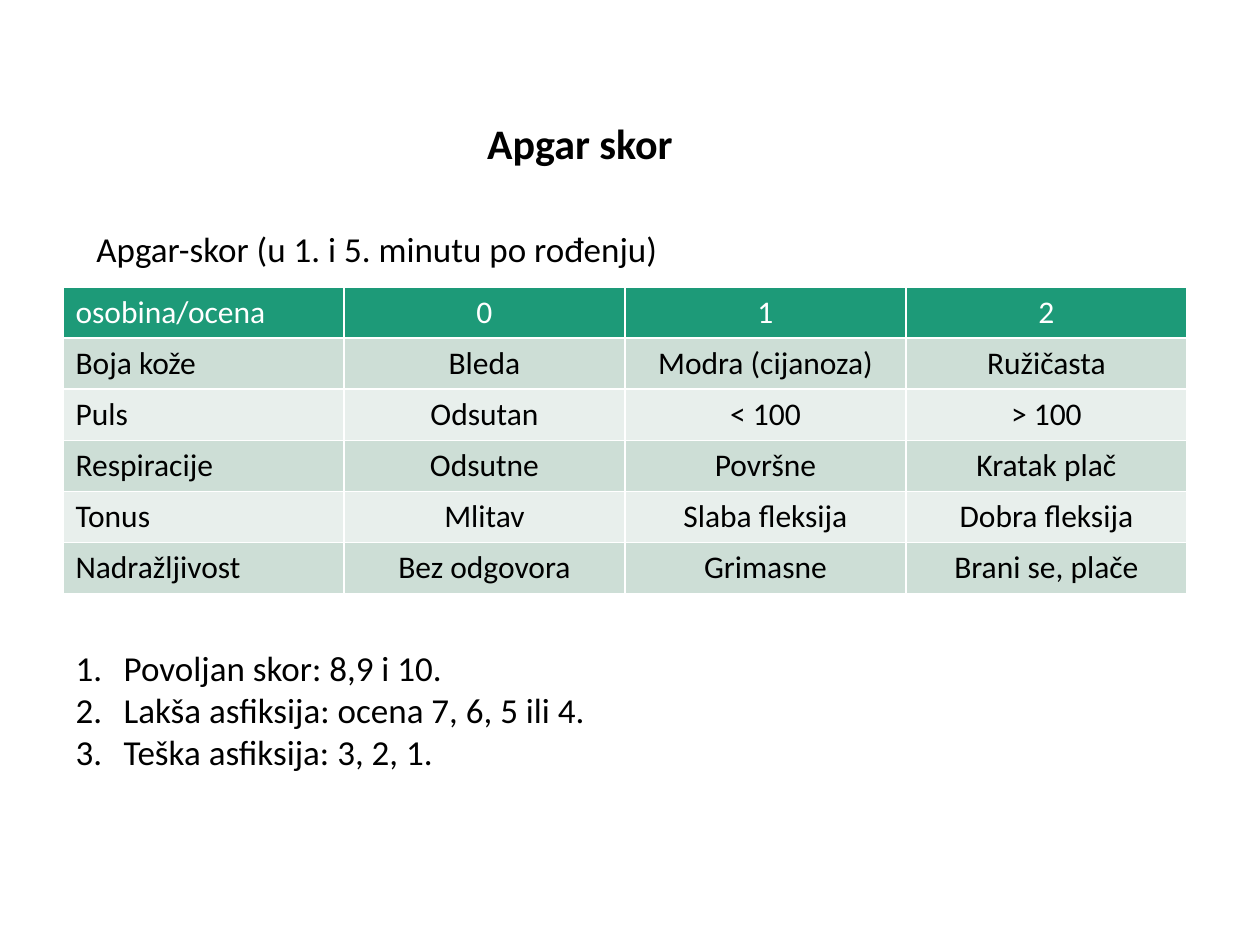
"""Build the Apgar score slide: title, score table and numbered list."""
from lxml.etree import SubElement
from pptx import Presentation
from pptx.dml.color import RGBColor as Rgb
from pptx.enum.text import MSO_ANCHOR as Anchor, MSO_AUTO_SIZE as Fit, PP_ALIGN as Align
from pptx.oxml.ns import qn
from pptx.util import Pt

PX = 914400 / 126
BLACK = Rgb(0x00, 0x00, 0x00)
WHITE = Rgb(0xFF, 0xFF, 0xFF)
GREEN = Rgb(0x1D, 0x9A, 0x78)
SAGE = Rgb(0xCD, 0xDE, 0xD6)
PALE = Rgb(0xE8, 0xEF, 0xEC)

ROWS = [
    ["osobina/ocena", "0", "1", "2"],
    ["Boja kože", "Bleda", "Modra (cijanoza)", "Ružičasta"],
    ["Puls", "Odsutan", "< 100", "> 100"],
    ["Respiracije", "Odsutne", "Površne", "Kratak plač"],
    ["Tonus", "Mlitav", "Slaba fleksija", "Dobra fleksija"],
    ["Nadražljivost", "Bez odgovora", "Grimasne", "Brani se, plače"],
]
ITEMS = [
    "Povoljan skor: 8,9 i 10.",
    "Lakša asfiksija: ocena 7, 6, 5 ili 4.",
    "Teška asfiksija: 3, 2, 1.",
]


def px(*sizes):
    return [round(size * PX) for size in sizes]


def write(para, text, size, color=BLACK, bold=False, align=Align.LEFT):
    para.alignment = align
    run = para.add_run()
    run.text = text
    font = run.font
    font.name, font.size, font.bold = "Calibri", Pt(size), bold
    font.color.rgb = color


deck = Presentation()
deck.slide_width, deck.slide_height = px(1260, 945)
slide = deck.slides.add_slide(deck.slide_layouts[1])
shapes = slide.shapes

title = shapes.title
title.left, title.top, title.width, title.height = px(81, 94, 998, 103)
title.text_frame.vertical_anchor = Anchor.MIDDLE
head = title.text_frame.paragraphs[0]
head.line_spacing = 0.9
write(head, "Apgar skor", 24, bold=True, align=Align.CENTER)

table = shapes.add_table(len(ROWS), 4, *px(63, 287, 1124, 306)).table
for col in table.columns:
    col.width = px(281)[0]
for i, words in enumerate(ROWS):
    table.rows[i].height = px(51)[0]
    fill = GREEN if i == 0 else SAGE if i % 2 else PALE
    for j, word in enumerate(words):
        cell = table.cell(i, j)
        cell.fill.solid()
        cell.fill.fore_color.rgb = fill
        write(cell.text_frame.paragraphs[0], word, 18,
              color=BLACK if i else WHITE,
              align=Align.CENTER if j else Align.LEFT)

note = shapes.add_textbox(*px(84, 221, 592, 55)).text_frame
note.word_wrap = False
note.auto_size = Fit.SHAPE_TO_FIT_TEXT
write(note.paragraphs[0], "Apgar-skor (u 1. i 5. minutu po rođenju)", 20)

body = slide.placeholders[1]
body.left, body.top, body.width, body.height = px(63, 640, 539, 183)
frame = body.text_frame
frame.word_wrap = False
frame.auto_size = Fit.NONE
step = px(48)[0]
for i, item in enumerate(ITEMS):
    para = frame.add_paragraph() if i else frame.paragraphs[0]
    para.space_before = Pt(0)
    write(para, item, 20)
    props = para._p.get_or_add_pPr()
    props.set("marL", str(step))
    props.set("indent", str(-step))
    SubElement(props, qn("a:buFont"), typeface="+mj-lt")
    SubElement(props, qn("a:buAutoNum"), type="arabicPeriod")

deck.save("out.pptx")
